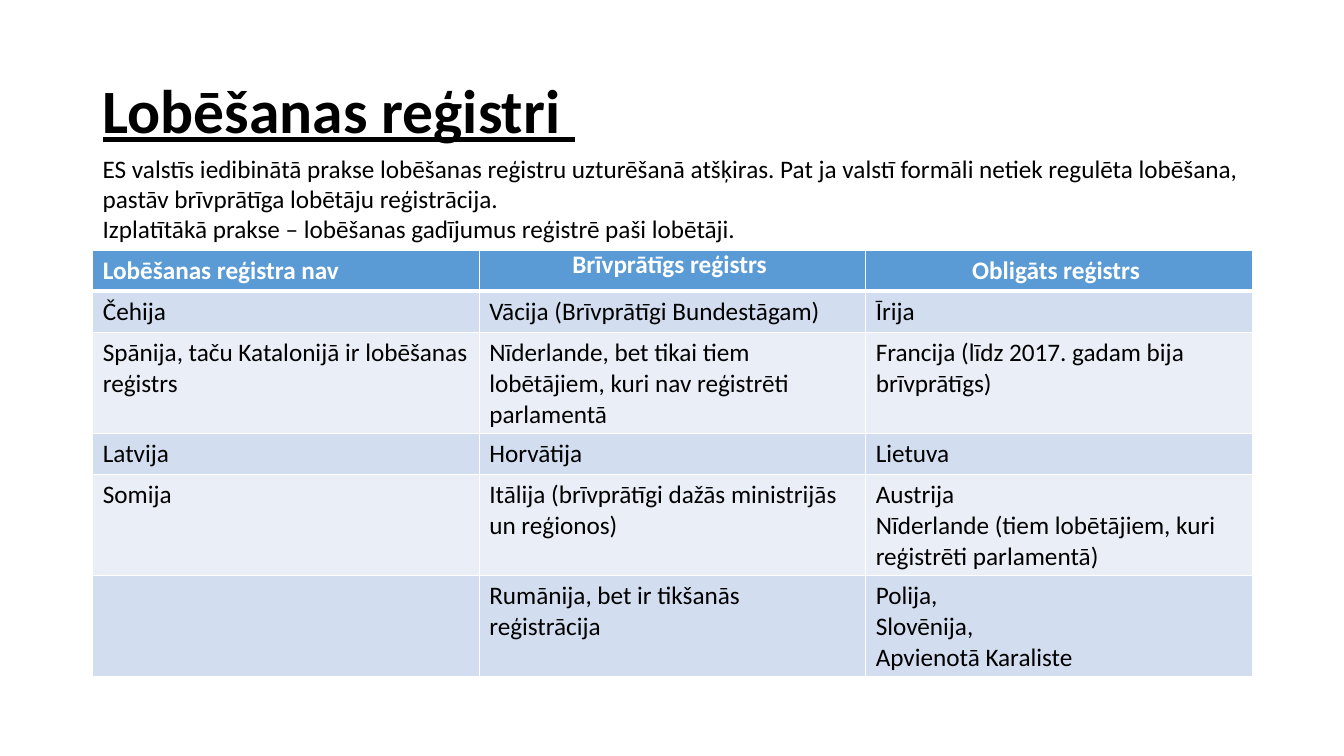
import pptx
import pptx.dml.color
import pptx.enum.text
import pptx.oxml
import pptx.oxml.ns
import pptx.util

RGBColor = pptx.dml.color.RGBColor
Align = pptx.enum.text.PP_ALIGN
Anchor = pptx.enum.text.MSO_ANCHOR

BLACK = RGBColor(0x00, 0x00, 0x00)
WHITE = RGBColor(0xFF, 0xFF, 0xFF)
HEADER_BLUE = RGBColor(0x5B, 0x9B, 0xD5)
BAND_DARK = RGBColor(0xD2, 0xDE, 0xEF)
BAND_LIGHT = RGBColor(0xEA, 0xEF, 0xF7)

FONT = "Calibri"
EMU_PER_PX = 9144  # 100 px to the inch
ROW_HEIGHT = 41

TITLE = "Lobēšanas reģistri "
INTRO = [
    "ES valstīs iedibinātā prakse lobēšanas reģistru uzturēšanā atšķiras. "
    "Pat ja valstī formāli netiek regulēta lobēšana, pastāv brīvprātīga lobētāju reģistrācija.",
    "Izplatītākā prakse – lobēšanas gadījumus reģistrē paši lobētāji.",
]
HEADINGS = ["Lobēšanas reģistra nav", "Brīvprātīgs reģistrs ", "Obligāts reģistrs "]
COUNTRIES = [
    [["Čehija"], ["Vācija (Brīvprātīgi Bundestāgam)"], ["Īrija"]],
    [["Spānija, taču Katalonijā ir lobēšanas reģistrs"],
     ["Nīderlande, bet tikai tiem lobētājiem, kuri nav reģistrēti parlamentā"],
     ["Francija (līdz 2017. gadam bija brīvprātīgs)"]],
    [["Latvija"], ["Horvātija"], ["Lietuva"]],
    [["Somija"],
     ["Itālija (brīvprātīgi dažās ministrijās un reģionos)"],
     ["Austrija", "Nīderlande (tiem lobētājiem, kuri reģistrēti parlamentā)"]],
    [[],
     ["Rumānija, bet ir tikšanās reģistrācija"],
     ["Polija,", "Slovēnija,", "Apvienotā Karaliste"]],
]


def px(length):
    return pptx.util.Emu(length * EMU_PER_PX)


def write(frame, lines, size=18, color=BLACK, bold=False, underline=False,
          align=Align.LEFT, line_spacing=None):
    for index, line in enumerate(lines):
        para = frame.paragraphs[0] if index == 0 else frame.add_paragraph()
        para.alignment = align
        para.line_spacing = line_spacing
        span = para.add_run()
        span.text = line
        span.font.name = FONT
        span.font.size = pptx.util.Pt(size)
        span.font.bold = bold
        span.font.underline = underline
        span.font.color.rgb = color


def add_text(page, box, lines, anchor=Anchor.TOP, **style):
    frame = page.shapes.add_textbox(*map(px, box)).text_frame
    frame.word_wrap = True
    frame.vertical_anchor = anchor
    write(frame, lines, **style)


def set_borders(cell, top=1, bottom=1):
    """Draw white cell borders; widths are in points."""
    properties = cell._tc.get_or_add_tcPr()
    namespace = pptx.oxml.ns.nsdecls("a")
    sides = {"lnL": 1, "lnR": 1, "lnT": top, "lnB": bottom}
    for index, (side, width) in enumerate(sides.items()):
        properties.insert(index, pptx.oxml.parse_xml(
            f'<a:{side} {namespace} w="{pptx.util.Pt(width)}"><a:solidFill>'
            f'<a:srgbClr val="{WHITE}"/></a:solidFill></a:{side}>'))


def fill_cell(cell, color):
    cell.fill.solid()
    cell.fill.fore_color.rgb = color


def add_register_table(page, box):
    holder = page.shapes.add_table(len(COUNTRIES) + 1, len(HEADINGS), *map(px, box))
    table = holder.table
    for row in table.rows:
        row.height = px(ROW_HEIGHT)
    holder.height = px(box[3])

    for column, heading in enumerate(HEADINGS):
        cell = table.cell(0, column)
        write(cell.text_frame, [heading], color=WHITE, bold=True,
              align=Align.CENTER if column else Align.LEFT)
        fill_cell(cell, HEADER_BLUE)
        set_borders(cell, bottom=3)
    middle = table.cell(0, 1)
    middle.margin_left = middle.margin_right = px(7)
    middle.margin_top = middle.margin_bottom = 0

    for row, entries in enumerate(COUNTRIES, start=1):
        for column, lines in enumerate(entries):
            cell = table.cell(row, column)
            write(cell.text_frame, lines)
            fill_cell(cell, BAND_DARK if row % 2 else BAND_LIGHT)
            set_borders(cell, top=3 if row == 1 else 1)


def add_register_page(deck):
    page = deck.slides.add_slide(deck.slide_layouts[6])
    add_text(page, (92, 40, 1150, 145), [TITLE], anchor=Anchor.MIDDLE,
             size=44, bold=True, underline=True, line_spacing=0.9)
    add_register_table(page, (92, 248, 1150, 422))
    add_text(page, (92, 147, 1159, 101), INTRO)


def main():
    deck = pptx.Presentation()
    deck.slide_width, deck.slide_height = px(1333), px(750)
    add_register_page(deck)
    deck.save("out.pptx")


if __name__ == "__main__":
    main()
